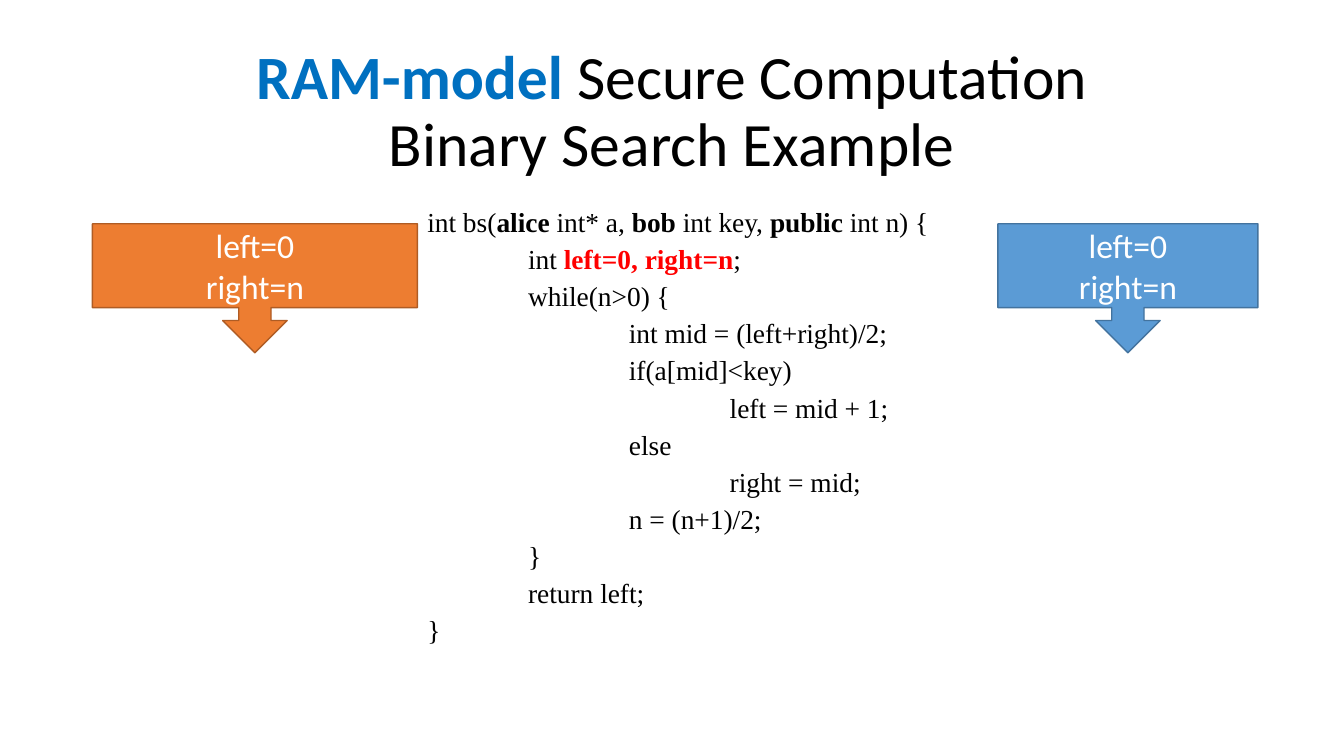
from dataclasses import dataclass

from pptx import Presentation
from pptx.dml.color import RGBColor
from pptx.enum.shapes import MSO_SHAPE
from pptx.enum.text import MSO_ANCHOR, PP_ALIGN
from pptx.util import Cm, Pt

CALLOUT = MSO_SHAPE.DOWN_ARROW_CALLOUT
TOP, MIDDLE = MSO_ANCHOR.TOP, MSO_ANCHOR.MIDDLE
LEFT, CENTER = PP_ALIGN.LEFT, PP_ALIGN.CENTER


@dataclass(frozen=True)
class Theme:
    """Fonts, type sizes and colours of the slide."""
    sans: str = "Calibri"
    serif: str = "Times New Roman"
    title_size: float = 44
    code_size: float = 19.6
    callout_size: float = 24
    text: str = "000000"
    inverse: str = "FFFFFF"
    accent: str = "0070C0"
    highlight: str = "FF0000"
    alice: tuple = ("ED7D31", "AF5C24")
    bob: tuple = ("5B9BD5", "43739E")


THEME = Theme()
INDENT = Cm(2.54)
TITLE = [[("RAM-model", THEME.accent), " Secure Computation\nBinary Search Example"]]
STATE = [["left=0"], ["right=n"]]
CODE = [
    (0, ["int bs(", ("alice ", THEME.text), "int* a, ", ("bob ", THEME.text),
         "int key, ", ("public ", THEME.text), "int n) {"]),
    (1, ["int ", ("left=0, right=n", THEME.highlight), ";"]),
    (1, ["while(n>0) {"]),
    (2, ["int mid = (left+right)/2;"]),
    (2, ["if(a[mid]<key)"]),
    (3, ["left = mid + 1;"]),
    (2, ["else"]),
    (3, ["right = mid;"]),
    (2, ["n = (n+1)/2;"]),
    (1, ["}"]),
    (1, ["return left;"]),
    (0, ["}"]),
]


def write_text(shape, lines, *, font, size, color, align=LEFT, anchor=TOP,
               spacing=1.0, before=0, levels=None):
    """Write lines of plain strings and bold (text, colour) pairs into a shape."""
    frame = shape.text_frame
    frame.word_wrap = True
    frame.vertical_anchor = anchor
    for index, pieces in enumerate(lines):
        paragraph = frame.add_paragraph() if index else frame.paragraphs[0]
        paragraph.alignment = align
        paragraph.line_spacing = spacing
        paragraph.space_before = Pt(before)
        if levels:
            properties = paragraph._p.get_or_add_pPr()
            properties.set("marL", str(levels[index] * INDENT))
        for piece in pieces:
            bold = isinstance(piece, tuple)
            text, run_color = piece if bold else (piece, color)
            for part_index, part in enumerate(text.split("\n")):
                if part_index:
                    paragraph.add_line_break()
                run = paragraph.add_run()
                run.text = part
                run.font.name = font
                run.font.size = Pt(size)
                run.font.bold = bold
                run.font.color.rgb = RGBColor.from_string(run_color)


def add_title(slide, box):
    """Place the two-line title in the box."""
    write_text(slide.shapes.add_textbox(*box), TITLE, font=THEME.sans,
               size=THEME.title_size, color=THEME.text, align=CENTER,
               anchor=MIDDLE, spacing=0.9)


def add_code(slide, box):
    """Place the indented code listing in the box."""
    levels, lines = zip(*CODE)
    write_text(slide.shapes.add_textbox(*box), lines, font=THEME.serif,
               size=THEME.code_size, color=THEME.text, spacing=0.7,
               before=10, levels=levels)


def add_state_callout(slide, box, colors):
    """Place one party's variables in a down arrow callout filling the box."""
    shape = slide.shapes.add_shape(CALLOUT, *box)
    fill, line = (RGBColor.from_string(color) for color in colors)
    shape.shadow.inherit = False
    shape.fill.solid()
    shape.fill.fore_color.rgb = fill
    shape.line.color.rgb = line
    shape.line.width = Pt(1)
    write_text(shape, STATE, font=THEME.sans, size=THEME.callout_size,
               color=THEME.inverse, align=CENTER, anchor=MIDDLE)


def main():
    """Build and save the presentation."""
    presentation = Presentation()
    presentation.slide_width = Cm(33.87)
    presentation.slide_height = Cm(19.05)
    slide = presentation.slides.add_slide(presentation.slide_layouts[6])
    margin, code_left, code_right = Cm(2.33), Cm(10.52), Cm(25.15)
    callout_top, callout_height = Cm(5.64), Cm(3.25)
    add_title(slide, (margin, Cm(1.01), Cm(29.21), Cm(3.68)))
    add_code(slide, (code_left, Cm(5.28), code_right - code_left, Cm(12.09)))
    add_state_callout(slide, (margin, callout_top, code_left - margin, callout_height),
                      THEME.alice)
    add_state_callout(slide, (code_right, callout_top, Cm(6.55), callout_height),
                      THEME.bob)
    presentation.save("out.pptx")


if __name__ == "__main__":
    main()
